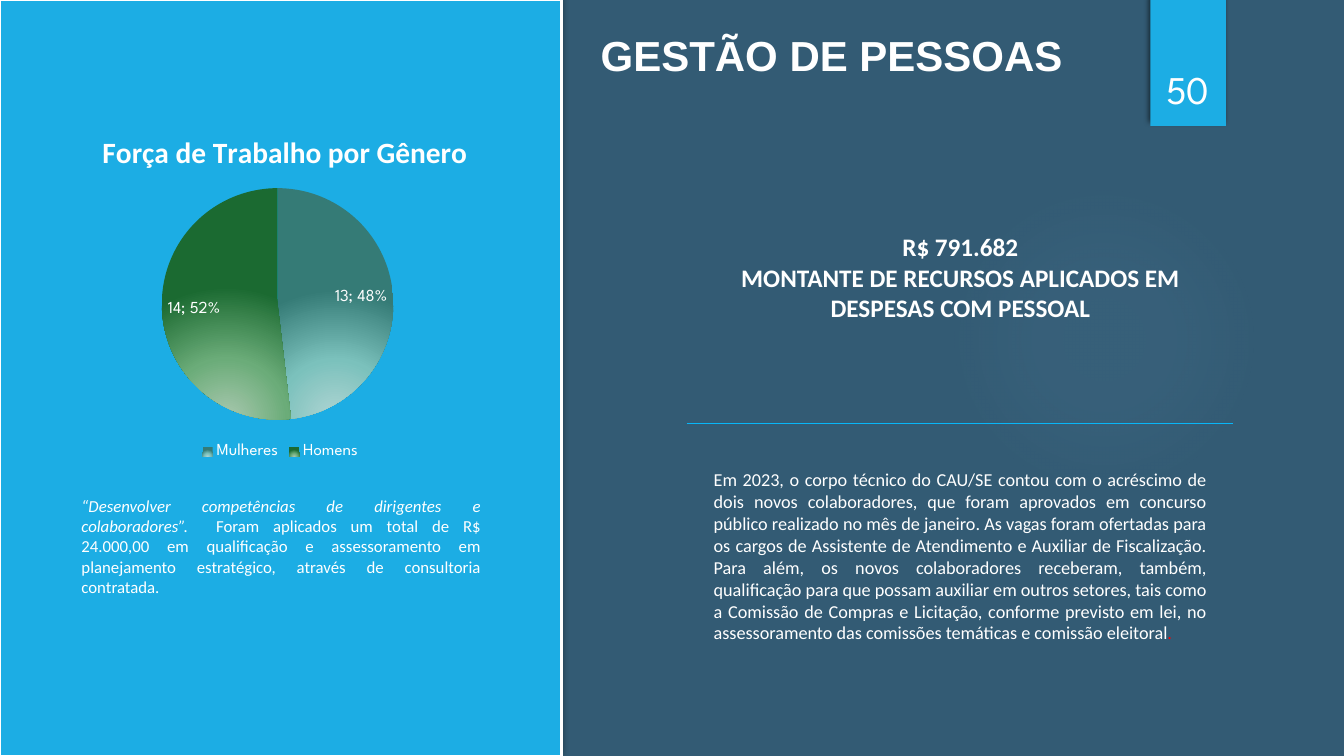
from lxml import etree
from pptx import Presentation
from pptx.chart import data
from pptx.dml.color import RGBColor
from pptx.enum import chart as kinds, shapes, text
from pptx.oxml import parse_xml
from pptx.oxml.ns import nsdecls, qn
from pptx.util import Inches, Pt

hue = RGBColor.from_string
NS = nsdecls("a")
WHITE, BLUE, SPARTAN = "FFFFFF", "1CADE4", "League Spartan"
MID, JUST = text.PP_ALIGN.CENTER, text.PP_ALIGN.JUSTIFY

deck = Presentation()
deck.slide_width, deck.slide_height = Inches(13.33), Inches(7.5)
slide = deck.slides.add_slide(deck.slide_layouts[6])
slide.background.fill.solid()
slide.background.fill.fore_color.rgb = hue("335B74")


def glow(fill, root, stops, rect):
    """Turn a fill, the last one below root, into a radial gradient."""
    fill.gradient()
    grad = list(root.iter(qn("a:gradFill")))[-1]
    for child in list(grad):
        grad.remove(child)
    marks = "".join(
        f'<a:gs pos="{pos * 1000}"><a:srgbClr val="{tint}">'
        f'<a:alpha val="{alpha * 1000}"/></a:srgbClr></a:gs>'
        for pos, tint, alpha in stops)
    left, top, right, low = (side * 1000 for side in rect)
    grad.append(parse_xml(f"<a:gsLst {NS}>{marks}</a:gsLst>"))
    grad.append(parse_xml(
        f'<a:path {NS} path="circle"><a:fillToRect l="{left}" t="{top}" '
        f'r="{right}" b="{low}"/></a:path>'))


def write(place, paras, size, face, align, bold=False):
    """Add a text box; each paragraph is a list of runs."""
    box = slide.shapes.add_textbox(*map(Inches, place))
    frame = box.text_frame
    frame.word_wrap = True
    for i, runs in enumerate(paras):
        para = frame.add_paragraph() if i else frame.paragraphs[0]
        para.alignment = align
        for words in runs:
            run = para.add_run()
            run.text = words
            run.font.size, run.font.name, run.font.bold = Pt(size), face, bold
            run.font.color.rgb = hue(WHITE)
    return frame


# Soft light behind the text
halo = slide.shapes.add_shape(
    shapes.MSO_SHAPE.OVAL, *map(Inches, (9.41, 1.83, 3.08, 3.08)))
halo.shadow.inherit = False
halo.line.fill.background()
glow(halo.fill, halo._element.spPr,
     [(0, "70A1C0", 7), (36, "70A1C0", 6), (69, "70A1C0", 0)], (50,) * 4)

# Page tab and left panel: place, border, shadow opacity, blur, distance
for place, edge, alpha, blur, dist in (
        ((11.41, 0, 0.75, 1.25), 0, 60, 4, 3),
        ((0, 0, 5.57, 7.5), 2, 50, 5, 2)):
    panel = slide.shapes.add_shape(
        shapes.MSO_SHAPE.RECTANGLE, *map(Inches, place))
    panel.fill.solid()
    panel.fill.fore_color.rgb = hue(BLUE)
    if edge:
        panel.line.color.rgb = hue(WHITE)
        panel.line.width = Pt(edge)
    else:
        panel.line.fill.background()
    panel.shadow.inherit = False
    panel._element.spPr.find(qn("a:effectLst")).append(parse_xml(
        f'<a:outerShdw {NS} blurRad="{Pt(blur)}" dist="{Pt(dist)}" '
        f'dir="{245 * 60000}" algn="ctr" rotWithShape="0">'
        f'<a:srgbClr val="000000"><a:alpha val="{alpha * 1000}"/></a:srgbClr>'
        '</a:outerShdw>'))

# Page number and heading
page = write((11.32, 0.32, 0.92, 0.84), [["50"]], 28, SPARTAN, MID)
page.vertical_anchor = text.MSO_ANCHOR.BOTTOM
write((5.86, 0.24, 5.76, 0.61), [["GESTÃO DE PESSOAS"]], 30, "Arial", JUST, True)

# Amount spent
write((7.03, 2.25, 4.99, 1.01),
      [["R$ 791.682"],
       ["MONTANTE DE RECURSOS APLICADOS EM DESPESAS COM PESSOAL"]],
      18, "Calibri", MID, True)

# Divider
rule = slide.shapes.add_connector(
    shapes.MSO_CONNECTOR.STRAIGHT, *map(Inches, (6.81, 4.2, 12.23, 4.2)))
rule.line.color.rgb = hue("08B6F8")
rule.line.width = Pt(0.75)
etree.SubElement(rule._element.spPr, qn("a:effectLst"))

# Staff text
staff = write(
    (6.98, 4.6, 5.08, 2.29),
    [["Em 2023, o corpo técnico do CAU/SE contou com o acréscimo de dois novos "
      "colaboradores, que foram aprovados em concurso público realizado no mês "
      "de janeiro. As vagas foram ofertadas para os cargos de Assistente de "
      "Atendimento e Auxiliar de Fiscalização. Para além, os novos "
      "colaboradores receberam, também, qualificação para que possam auxiliar "
      "em outros setores, tais como a Comissão de Compras e Licitação, conforme "
      "previsto em lei, no assessoramento das comissões temáticas e comissão "
      "eleitoral", "."]],
    13, "Calibri", JUST)
staff.paragraphs[0].runs[1].font.color.rgb = hue("FF0000")

# Training text
skill = write(
    (0.71, 4.87, 4.16, 1.55),
    [["“Desenvolver competências de dirigentes e colaboradores”.  ",
      "Foram aplicados um total de R$ 24.000,00 em qualificação e "
      "assessoramento em planejamento estratégico, através de consultoria "
      "contratada."]],
    12, "Calibri", JUST)
skill.paragraphs[0].runs[0].font.italic = True

# Pie of staff by gender
staffing = data.CategoryChartData()
staffing.categories = ["Mulheres", "Homens"]
staffing.add_series("Series 1", (13, 14))
pie = slide.shapes.add_chart(
    kinds.XL_CHART_TYPE.PIE, *map(Inches, (0.11, 1.04, 5.34, 3.56)),
    staffing).chart
pie.font.size, pie.font.name = Pt(10), SPARTAN
pie.font.color.rgb = hue(WHITE)

pie.has_title = True
title = pie.chart_title.text_frame
title.text = "Força de Trabalho por Gênero"
face = title.paragraphs[0].runs[0].font
face.size, face.name, face.bold = Pt(21), "Calibri", True
face.color.rgb = hue(WHITE)

pie.has_legend = True
pie.legend.position = kinds.XL_LEGEND_POSITION.BOTTOM
pie.legend.include_in_layout = False

plot = pie.plots[0]
plot.vary_by_categories = True
plot.has_data_labels = True
tags = plot.data_labels
tags.show_value = tags.show_percentage = True
tags.position = kinds.XL_LABEL_POSITION.INSIDE_END
for font in (pie.legend.font, tags.font):
    font.size, font.name = Pt(12), SPARTAN
    font.color.rgb = hue(WHITE)
mark = etree.Element(qn("c:separator"))
mark.text = "; "
tags._element.find(qn("c:showBubbleSize")).addnext(mark)

series = plot.series[0]
for i, tints in enumerate((("B0D5D3", "7BC1BC", "357B76"),
                           ("AAC9B0", "6BAC79", "1B6A31"))):
    stops = [(pos, tint, 100) for pos, tint in zip((0, 46, 100), tints)]
    glow(series.points[i].format.fill, series._element, stops,
         (50, 155, 50, -55))

# Fixed places for the chart title and the pie
area = pie._chartSpace.chart.plotArea
for owner, inner, place in (
        (pie.chart_title._element, "", {"x": 0.16, "y": 0.06}),
        (area, '<c:layoutTarget val="inner"/>',
         {"x": 0.28, "y": 0.23, "w": 0.43, "h": 0.65})):
    for old in owner.findall(qn("c:layout")):
        owner.remove(old)
    modes = "".join(f'<c:{key}Mode val="edge"/>' for key in "xy")
    sizes = "".join(f'<c:{key} val="{val}"/>' for key, val in place.items())
    layout = parse_xml(f'<c:layout {nsdecls("c")}><c:manualLayout>{inner}{modes}'
                       f'{sizes}</c:manualLayout></c:layout>')
    if owner is area:
        owner.insert(0, layout)
    else:
        owner.find(qn("c:tx")).addnext(layout)

deck.save("out.pptx")
